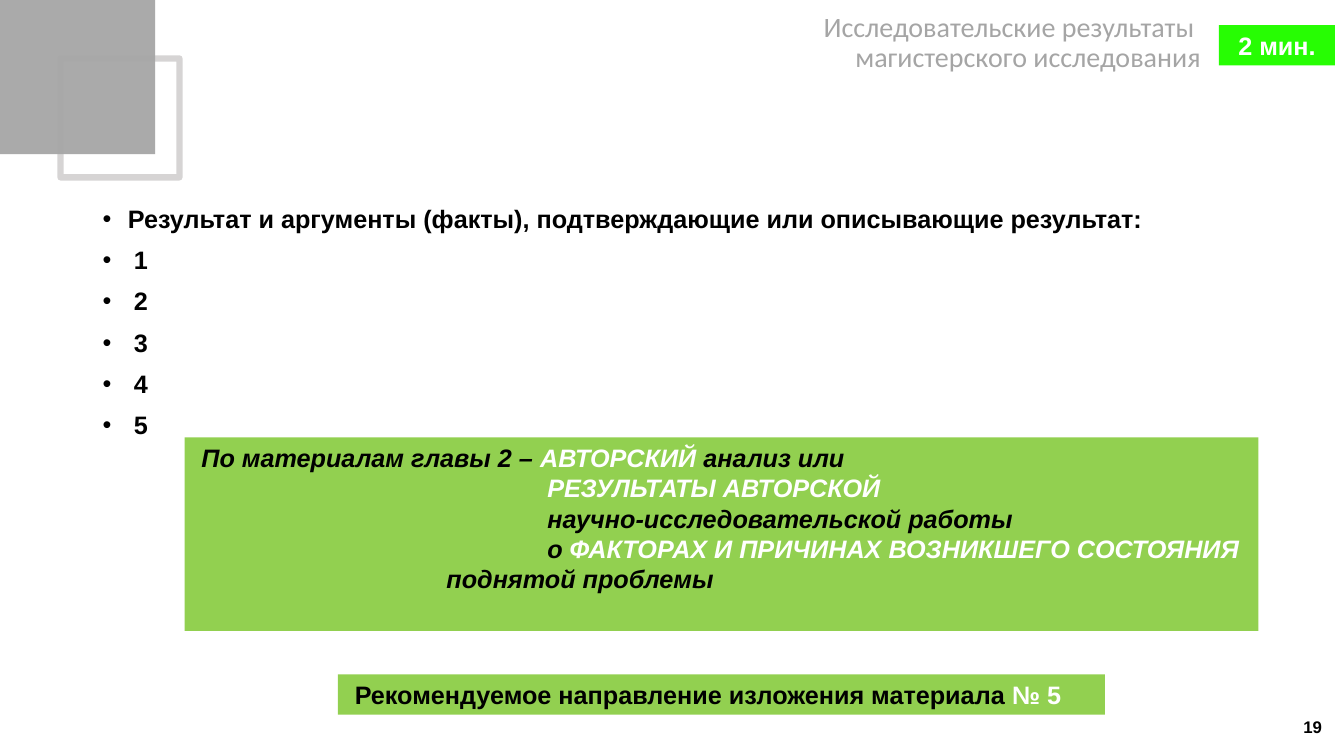
from lxml import etree
from pptx import Presentation
from pptx.dml.color import RGBColor
from pptx.enum import shapes, text
from pptx.oxml import ns
from pptx.util import Inches, Pt

BLACK, WHITE, GREEN = "000000", "FFFFFF", "92D050"
ALIGN = text.PP_ALIGN


def rgb(value):
    """Turn a hex string into a colour."""
    return RGBColor.from_string(value)


def set_alpha(fill, percent):
    """Make a solid fill partly transparent."""
    color = fill._xPr.find(ns.qn("a:solidFill"))[0]
    etree.SubElement(color, ns.qn("a:alpha"), val=str(percent * 1000))


def add_panel(slide, box, fill=None):
    """Place a rectangle with no outline or shadow."""
    panel = slide.shapes.add_shape(shapes.MSO_SHAPE.RECTANGLE, *map(Inches, box))
    panel.shadow.inherit = False
    panel.line.fill.background()
    if fill:
        panel.fill.solid()
        panel.fill.fore_color.rgb = rgb(fill)
    else:
        panel.fill.background()
    return panel


def add_text_area(slide, box):
    """Place an empty text box that wraps."""
    area = slide.shapes.add_textbox(*map(Inches, box))
    area.text_frame.word_wrap = True
    return area


def write_lines(area, lines, size=18, font="Arial", bold=True, italic=False,
                align=ALIGN.LEFT, spacing=None, anchor=text.MSO_ANCHOR.TOP):
    """Write lines given as (left margin, [(wording, colour), ...])."""
    frame = area.text_frame
    frame.vertical_anchor = anchor
    for index, (margin, runs) in enumerate(lines):
        line = frame.paragraphs[0] if index == 0 else frame.add_paragraph()
        line.alignment = align
        if spacing:
            line.line_spacing = spacing
        if margin:
            line._p.get_or_add_pPr().set("marL", str(Inches(margin)))
        for wording, color in runs:
            run = line.add_run()
            run.text = wording
            run.font.size = Pt(size)
            run.font.name = font
            run.font.bold = bold
            run.font.italic = italic
            run.font.color.rgb = rgb(color)
    return frame


def add_corner(slide, left, top):
    """Draw the corner ornament of two overlapping squares."""
    outline = add_panel(slide, (left + 0.6, top + 0.59, 1.18, 1.18))
    outline.line.fill.solid()
    outline.line.fill.fore_color.rgb = rgb("AFABAB")
    set_alpha(outline.line.fill, 50)
    outline.line.width = Pt(4.5)
    square = add_panel(slide, (left, top, 1.54, 1.54), "A6A6A6")
    set_alpha(square.fill, 95)


def add_header(slide, left, top, width):
    """Place the section title and the time badge to its right."""
    title = add_text_area(slide, (left, top, width, 0.7))
    frame = title.text_frame
    frame.margin_left = frame.margin_right = frame.margin_top = frame.margin_bottom = 0
    wording = ["Исследовательские результаты ", "магистерского исследования"]
    write_lines(title, [(0, [(part, "A5A5A5")]) for part in wording], size=20,
                font="Calibri", bold=False, align=ALIGN.RIGHT, spacing=0.9)
    badge = add_panel(slide, (left + width + 0.18, top + 0.12, 1.15, 0.4), "27FD03")
    write_lines(badge, [(0, [("2 мин.", WHITE)])], align=ALIGN.CENTER)


def add_findings(slide, box):
    """List the result and its numbered arguments as bullets."""
    heading = "Результат и аргументы (факты), подтверждающие или описывающие результат:"
    findings = [heading, *map(str, range(1, 6))]
    frame = write_lines(add_text_area(slide, box),
                        [(0.25 if item == heading else 0.31, [(item, BLACK)])
                         for item in findings], spacing=0.9)
    for index, line in enumerate(frame.paragraphs):
        if index:
            line.space_before = Pt(10)
        props = line._p.get_or_add_pPr()
        props.set("indent", "-" + props.get("marL"))
        etree.SubElement(props, ns.qn("a:buFont"), typeface="Arial")
        etree.SubElement(props, ns.qn("a:buChar"), char="•")


def add_guidance(slide, left, top, width):
    """Place the chapter note and the recommended direction centred below it."""
    note = add_panel(slide, (left, top, width, 1.92), GREEN)
    write_lines(note, [
        (0.07, [("По материалам главы 2 – ", BLACK), ("АВТОРСКИЙ ", WHITE),
                ("анализ или", BLACK)]),
        (3.5, [("РЕЗУЛЬТАТЫ АВТОРСКОЙ", WHITE)]),
        (3.5, [("научно-исследовательской работы", BLACK)]),
        (3.5, [("о ", BLACK), ("ФАКТОРАХ И ПРИЧИНАХ ВОЗНИКШЕГО СОСТОЯНИЯ", WHITE)]),
        (2.5, [("поднятой проблемы", BLACK)]),
    ], italic=True)
    direction_width = 7.61
    direction = add_panel(slide, (left + (width - direction_width) / 2, top + 2.35,
                                  direction_width, 0.4), GREEN)
    write_lines(direction, [(0.07, [("Рекомендуемое направление изложения материала ", BLACK),
                                    ("№ 5", WHITE)])])


def add_page_number(slide, box):
    """Place the page number against the right edge."""
    write_lines(add_text_area(slide, box), [(0, [("19", BLACK)])], size=12,
                align=ALIGN.RIGHT, anchor=text.MSO_ANCHOR.MIDDLE)


def main():
    """Build and save the slide."""
    deck = Presentation()
    deck.slide_width, deck.slide_height = Inches(13.33), Inches(7.5)
    slide = deck.slides.add_slide(deck.slide_layouts[6])
    add_corner(slide, 0, -0.01)
    add_findings(slide, (0.92, 2, 11.5, 4.76))
    add_guidance(slide, 1.83, 4.34, 10.65)
    add_header(slide, 1.25, 0.13, 10.66)
    add_page_number(slide, (10.21, 7.01, 3, 0.4))
    deck.save("out.pptx")


if __name__ == "__main__":
    main()
